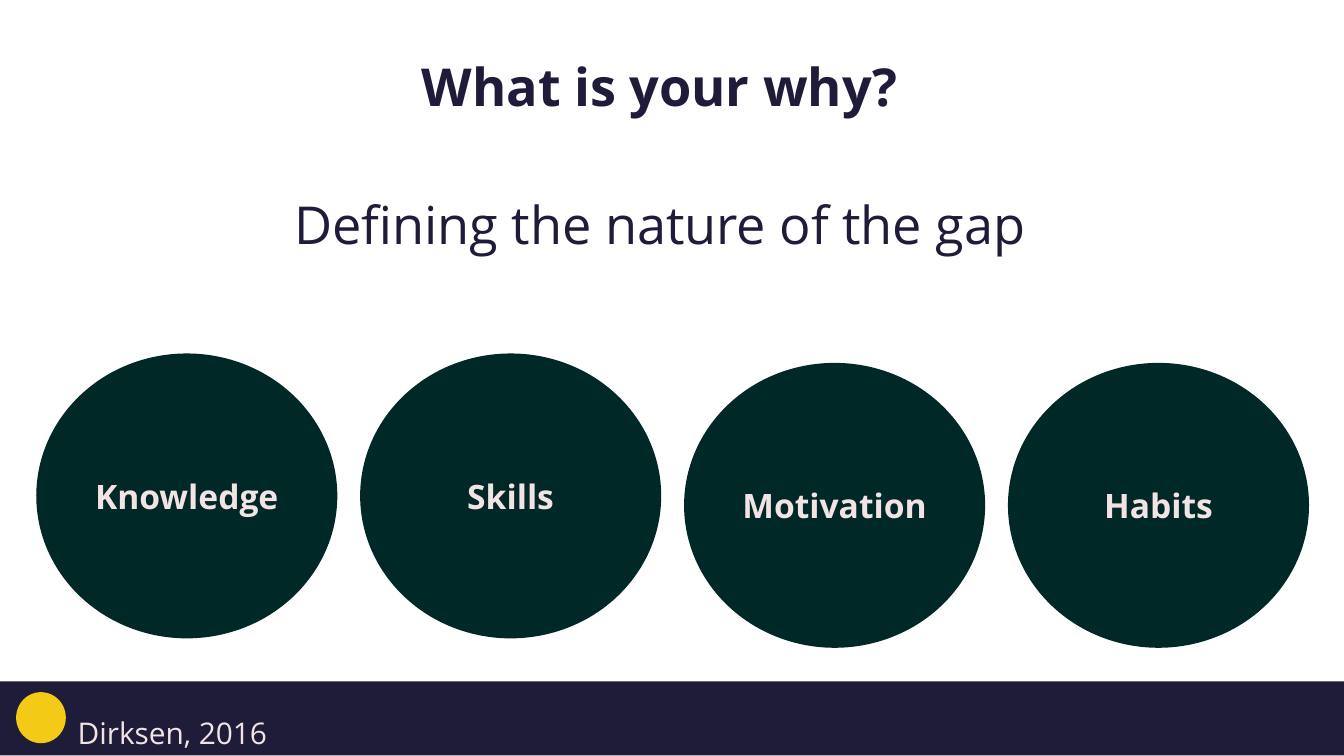
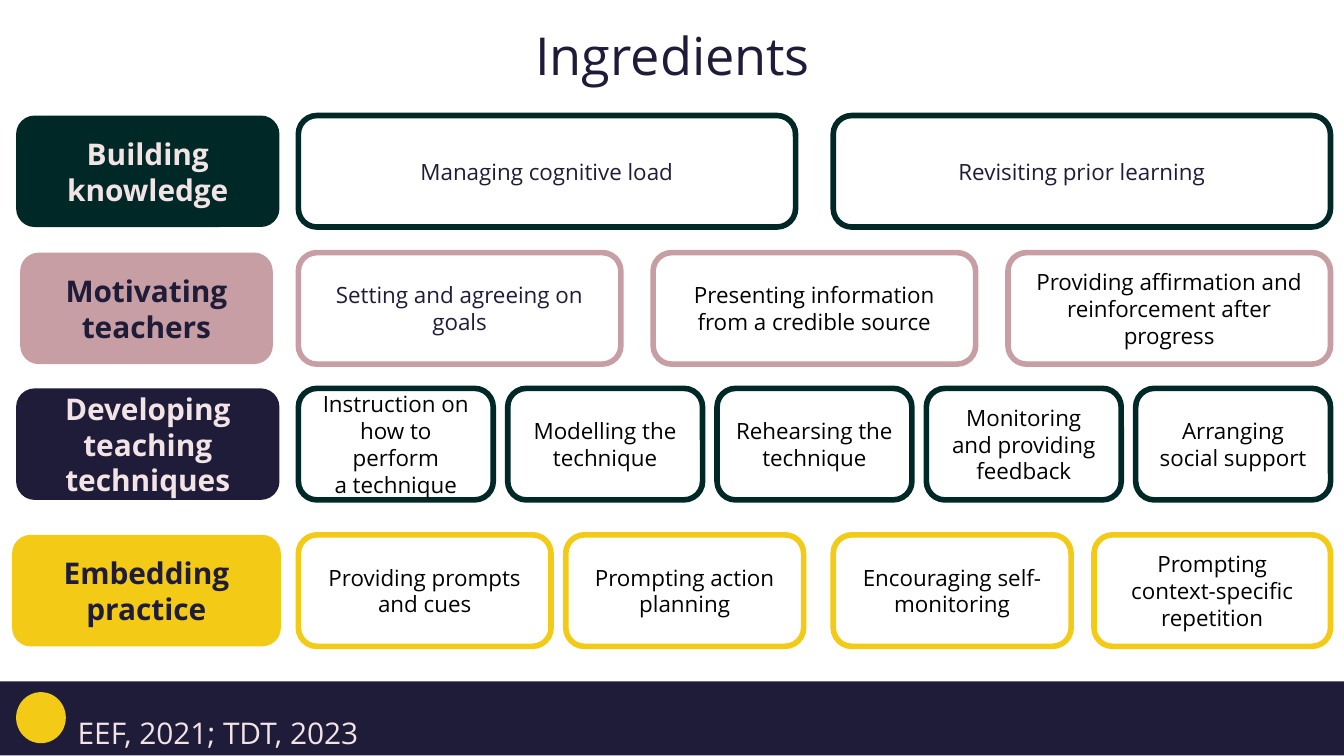
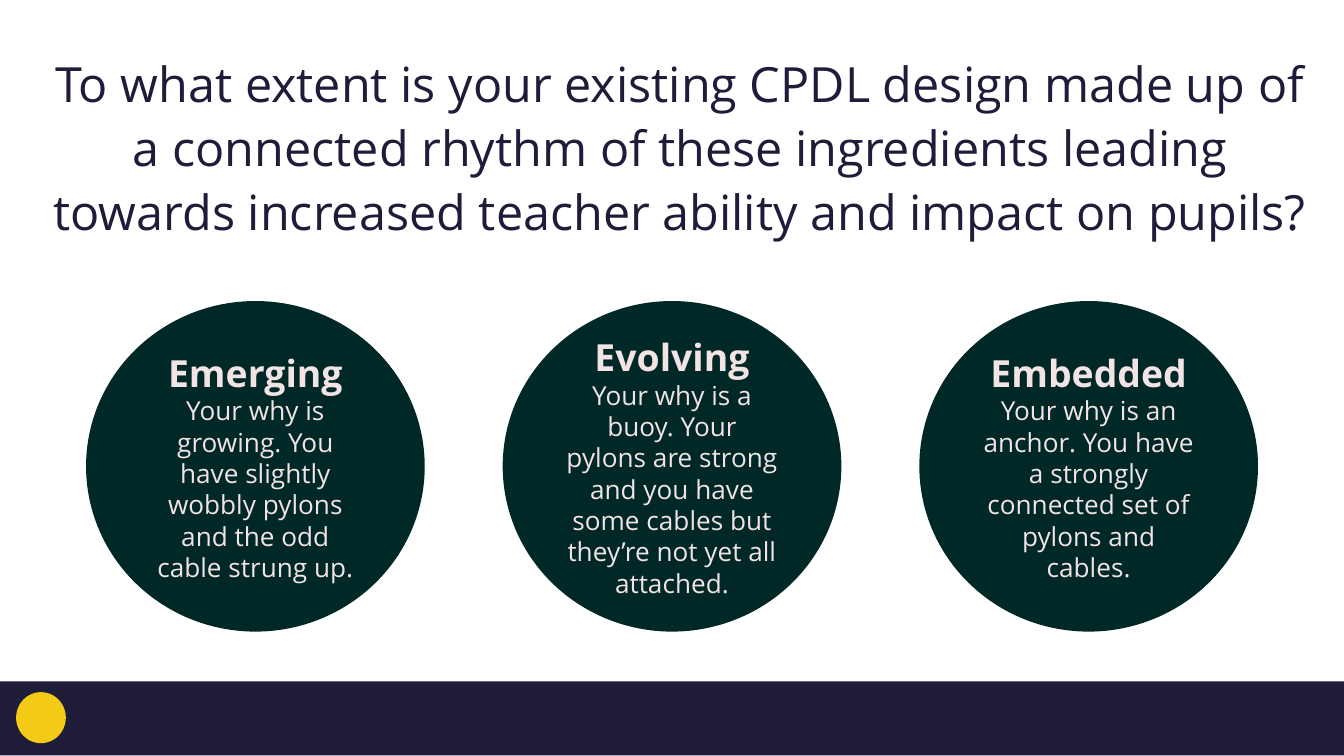
from pptx import Presentation
from pptx.dml.color import RGBColor
from pptx.enum.shapes import MSO_SHAPE as Shape
from pptx.enum.text import MSO_ANCHOR as Anchor, MSO_AUTO_SIZE as AutoSize, PP_ALIGN as Align
from pptx.util import Inches, Pt

NAVY, GREEN, PINK, YELLOW = "1F1C39", "002826", "C79EA3", "F3CA16"
PALE, BLACK = "F2E3E5", "000000"


def rgb(value):
    return RGBColor.from_string(value)


def write(paragraph, text, size=12, color=BLACK, bold=False, align=Align.CENTER,
          spacing=None, before=None):
    paragraph.alignment = align
    if spacing:
        paragraph.line_spacing = spacing
    if before:
        paragraph.space_before = Pt(before)
    run = paragraph.add_run()
    run.text = text
    run.font.name = "Open Sans"
    run.font.size = Pt(size)
    run.font.bold = bold
    run.font.color.rgb = rgb(color)


def spread(count, width, left, right):
    step = (right - left - width) / (count - 1)
    return [(left + index * step, width) for index in range(count)]


class Deck:
    def __init__(self):
        self.presentation = Presentation()
        self.presentation.slide_width = Inches(10)
        self.presentation.slide_height = Inches(10) * 9 // 16
        self.slide = None

    def start(self, source=None):
        self.slide = self.presentation.slides.add_slide(self.presentation.slide_layouts[6])
        self.shape(Shape.RECTANGLE, 0, 5.07, 10, 0.55, fill=NAVY)
        self.shape(Shape.OVAL, 0.12, 5.15, 0.37, 0.38, fill=YELLOW)
        if source:
            self.text(0.48, 5.11, 6.76, 0.47, [(source, {})], margin=0.1,
                      size=16, color=PALE, align=Align.LEFT, spacing=1.4)

    def fill_frame(self, frame, paragraphs, margin, **style):
        frame.word_wrap = True
        frame.margin_left = frame.margin_right = Inches(margin)
        frame.margin_top = frame.margin_bottom = Inches(margin)
        for index, (text, changes) in enumerate(paragraphs):
            paragraph = frame.add_paragraph() if index else frame.paragraphs[0]
            write(paragraph, text, **{**style, **changes})

    def text(self, left, top, width, height, paragraphs, margin=0, **style):
        box = self.slide.shapes.add_textbox(
            Inches(left), Inches(top), Inches(width), Inches(height))
        self.fill_frame(box.text_frame, paragraphs, margin, **style)
        box.text_frame.auto_size = AutoSize.SHAPE_TO_FIT_TEXT

    def title(self, left, top, width, height, paragraphs, size=28):
        self.text(left, top, width, height, paragraphs, size=size, color=NAVY, spacing=1.1)

    def shape(self, kind, left, top, width, height, paragraphs=(), fill=None, line=None, **style):
        shape = self.slide.shapes.add_shape(
            kind, Inches(left), Inches(top), Inches(width), Inches(height))
        shape.shadow.inherit = False
        if fill:
            shape.fill.solid()
            shape.fill.fore_color.rgb = rgb(fill)
        else:
            shape.fill.background()
        if line:
            shape.line.color.rgb = rgb(line)
            shape.line.width = Pt(3)
        else:
            shape.line.fill.background()
        if paragraphs:
            shape.text_frame.vertical_anchor = Anchor.MIDDLE
            self.fill_frame(shape.text_frame, paragraphs, 0.1, **style)

    def circle(self, left, top, width, height, paragraphs, size):
        self.shape(Shape.OVAL, left, top, width, height, paragraphs,
                   fill=GREEN, size=size, color=PALE, bold=True)

    def card(self, left, top, width, paragraphs, **style):
        self.shape(Shape.ROUNDED_RECTANGLE, left, top, width, 0.83, paragraphs, **style)


def gap_slide(deck):
    deck.start("Dirksen, 2016")
    deck.title(0.48, 0.36, 8.86, 1.51, [
        ("What is your why?", {"bold": True}),
        ("Defining the nature of the gap", {"before": 37}),
    ])
    names = ["Knowledge", "Skills", "Motivation", "Habits"]
    tops = [2.63, 2.63, 2.7, 2.7]
    for name, top, (left, width) in zip(names, tops, spread(4, 2.24, 0.27, 9.74)):
        deck.circle(left, top, width, 2.12, [(name, {})], size=18)


def ingredients_slide(deck):
    deck.start("EEF, 2021; TDT, 2023")
    deck.title(1.87, 0.13, 6.27, 0.47, [("Ingredients", {})])
    first, last = 2.22, 9.9
    rows = [
        (0.86, "Building knowledge", 0.12, 1.96, GREEN, PALE, GREEN,
         spread(2, 3.7, first, last),
         [("Managing cognitive load", NAVY), ("Revisiting prior learning", NAVY)]),
        (1.88, "Motivating teachers", 0.15, 1.88, PINK, NAVY, PINK,
         spread(3, 2.4, first, last),
         [("Setting and agreeing on goals", NAVY),
          ("Presenting information from a credible source", BLACK),
          ("Providing affirmation and reinforcement after progress", BLACK)]),
        (2.89, "Developing teaching techniques", 0.12, 1.96, NAVY, PALE, GREEN,
         spread(5, 1.45, first, last),
         [("Instruction on how to perform\na technique", BLACK),
          ("Modelling the technique", BLACK),
          ("Rehearsing the technique", BLACK),
          ("Monitoring and providing feedback", BLACK),
          ("Arranging social support", BLACK)]),
        (3.98, "Embedding practice", 0.09, 2, YELLOW, NAVY, YELLOW,
         [(first, 1.88), (4.21, 1.77), (6.2, 1.77), (8.14, 1.76)],
         [("Providing prompts and cues", BLACK),
          ("Prompting action planning", BLACK),
          ("Encouraging self-monitoring", BLACK),
          ("Prompting context-specific repetition", BLACK)]),
    ]
    for top, heading, left, width, fill, ink, outline, places, ingredients in rows:
        deck.card(left, top, width, [(heading, {})], fill=fill, size=16, color=ink, bold=True)
        for (card_left, card_width), (text, color) in zip(places, ingredients):
            lines = [(line, {}) for line in text.split("\n")]
            deck.card(card_left, top, card_width, lines, line=outline, color=color)


def rhythm_slide(deck):
    deck.start()
    question = ("To what extent is your existing CPDL design made up of a connected rhythm of "
                "these ingredients leading towards increased teacher ability and impact on pupils?")
    deck.title(0.27, 0.36, 9.59, 1.4, [(question, {})], size=26)
    stages = [
        ("Emerging", "Your why is growing. You have slightly wobbly pylons "
                     "and the odd cable strung up."),
        ("Evolving", "Your why is a buoy. Your pylons are strong and you have "
                     "some cables but they’re not yet all attached."),
        ("Embedded", "Your why is an anchor. You have a strongly connected "
                     "set of pylons and cables."),
    ]
    for (name, detail), (left, width) in zip(stages, spread(3, 2.52, 0.64, 9.36)):
        deck.circle(left, 2.24, width, 2.46,
                    [(name, {}), (detail, {"size": 14, "bold": False})], size=20)


def main():
    deck = Deck()
    gap_slide(deck)
    ingredients_slide(deck)
    rhythm_slide(deck)
    deck.presentation.save("out.pptx")


if __name__ == "__main__":
    main()
